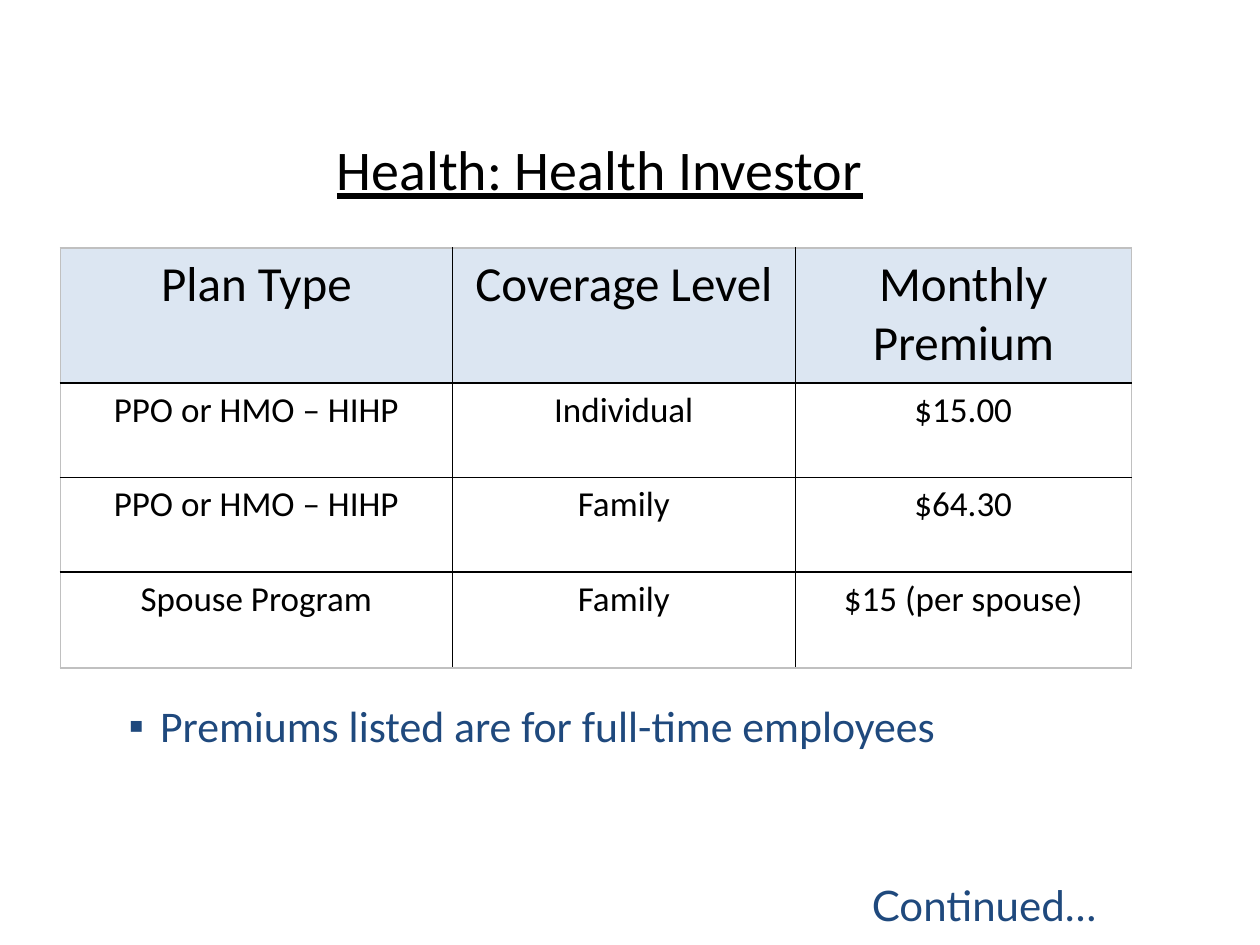
from dataclasses import dataclass

from lxml import etree
from pptx import Presentation
from pptx.dml.color import RGBColor
from pptx.enum.text import MSO_ANCHOR, MSO_AUTO_SIZE, PP_ALIGN
from pptx.oxml.ns import qn
from pptx.util import Pt

CENTER, RIGHT = PP_ALIGN.CENTER, PP_ALIGN.RIGHT
TOP, MIDDLE = MSO_ANCHOR.TOP, MSO_ANCHOR.MIDDLE
FIXED = MSO_AUTO_SIZE.NONE


@dataclass(frozen=True)
class Theme:
    ink: str = "000000"
    blue: str = "1F497D"
    head: str = "DCE6F2"
    edge: str = "C0C0C0"
    main: str = "Calibri"
    alt: str = "Lato"
    title: float = 32
    label: float = 28
    cell: float = 20
    note: float = 25
    more: float = 24


@dataclass(frozen=True)
class Box:
    left: float
    top: float
    width: float
    height: float


THEME = Theme()
TITLE = Box(21.6, 66.25, 642.25, 59.75)
GRID = Box(34.5, 141.75, 612, 240)
NOTE = Box(66.25, 401.75, 599.75, 32.5)
MORE = Box(441.35, 499, 192.25, 36)

COLS = (224, 196, 192)
ROWS = (77, 54, 54, 55)
PLANS = (
    ("Plan Type", "Coverage Level", "Monthly Premium"),
    ("PPO or HMO – HIHP", "Individual", "$15.00"),
    ("PPO or HMO – HIHP", "Family", "$64.30"),
    ("Spouse Program", "Family", "$15 (per spouse)"),
)


def place(shape, box: Box) -> None:
    shape.left, shape.top = Pt(box.left), Pt(box.top)
    shape.width, shape.height = Pt(box.width), Pt(box.height)


def style(para, size: float, color: str, face: str = THEME.main) -> None:
    para.space_before = Pt(0)
    font = para.font
    font.name, font.size = face, Pt(size)
    font.color.rgb = RGBColor.from_string(color)


def write(shape, text: str, anchor):
    """Fill a shape with one paragraph and return it."""
    frame = shape.text_frame
    frame.text = text
    frame.word_wrap = True
    frame.auto_size = FIXED
    frame.vertical_anchor = anchor
    return frame.paragraphs[0]


def bullet(para, mark: str, indent: float) -> None:
    props = para._p.get_or_add_pPr()
    props.set("marL", str(Pt(indent)))
    props.set("indent", str(-Pt(indent)))
    etree.SubElement(props, qn("a:buChar")).set("char", mark)


def border(cell, row: int, col: int) -> None:
    """Draw grey lines on the table's rim and black lines inside."""
    rim = {
        "L": col == 0,
        "R": col == len(COLS) - 1,
        "T": row == 0,
        "B": row == len(ROWS) - 1,
    }
    props = cell._tc.get_or_add_tcPr()
    for side, outer in rim.items():
        line = etree.SubElement(props, qn(f"a:ln{side}"), w=str(Pt(1)))
        fill = etree.SubElement(line, qn("a:solidFill"))
        color = THEME.edge if outer else THEME.ink
        etree.SubElement(fill, qn("a:srgbClr"), val=color)


def add_grid(slide) -> None:
    frame = slide.shapes.add_table(
        len(ROWS), len(COLS),
        Pt(GRID.left), Pt(GRID.top), Pt(GRID.width), Pt(GRID.height),
    )
    table = frame.table
    table.first_row = table.horz_banding = False
    for col, width in zip(table.columns, COLS):
        col.width = Pt(width)
    for r, (height, texts) in enumerate(zip(ROWS, PLANS)):
        table.rows[r].height = Pt(height)
        for c, text in enumerate(texts):
            cell = table.cell(r, c)
            cell.text = text
            para = cell.text_frame.paragraphs[0]
            para.alignment = CENTER
            style(para, THEME.cell if r else THEME.label, THEME.ink)
            border(cell, r, c)
            if r:
                cell.fill.background()
            else:
                cell.fill.solid()
                cell.fill.fore_color.rgb = RGBColor.from_string(THEME.head)


def main() -> None:
    deck = Presentation()
    deck.slide_width, deck.slide_height = Pt(720), Pt(540)
    slide = deck.slides.add_slide(deck.slide_layouts[1])

    title = slide.shapes.title
    place(title, TITLE)
    para = write(title, "Health: Health Investor", MIDDLE)
    para.alignment = CENTER
    style(para, THEME.title, THEME.ink)
    para.font.underline = True

    note = slide.placeholders[1]
    place(note, NOTE)
    para = write(note, "Premiums listed are for full-time employees", TOP)
    para.line_spacing = 0.8
    para.space_before = Pt(0)
    bullet(para, "▪", 18)
    style(para, THEME.note, THEME.blue)

    more = slide.shapes.add_textbox(0, 0, 0, 0)
    place(more, MORE)
    para = write(more, "Continued…", TOP)
    para.alignment = RIGHT
    style(para, THEME.more, THEME.blue, THEME.alt)

    add_grid(slide)
    deck.save("out.pptx")


if __name__ == "__main__":
    main()
